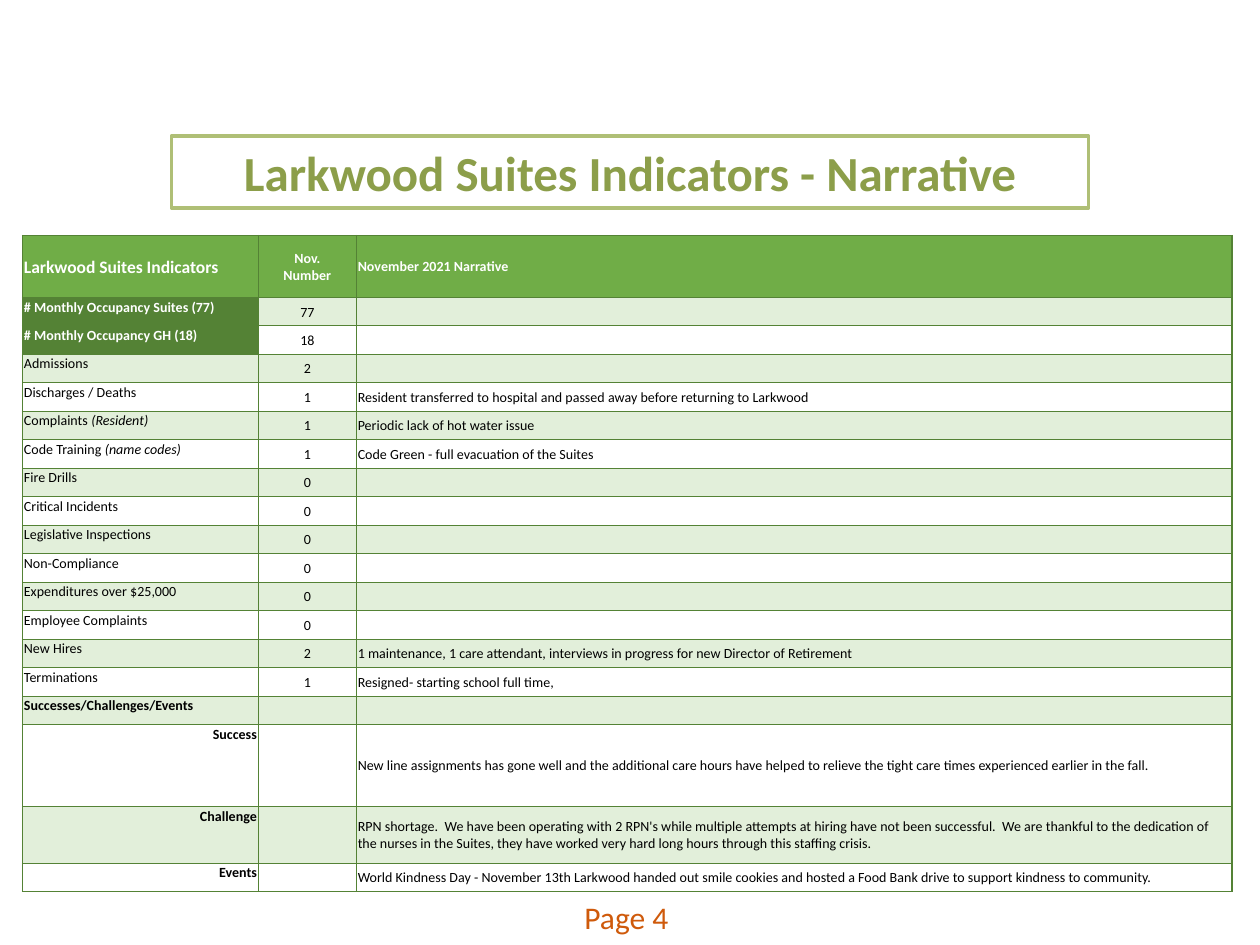
from lxml.etree import SubElement
from pptx import Presentation
from pptx.dml.color import RGBColor
from pptx.enum.shapes import MSO_SHAPE
from pptx.enum.text import MSO_ANCHOR, MSO_AUTO_SIZE, PP_ALIGN
from pptx.oxml.ns import qn
from pptx.util import Inches, Pt

COLORS = {
    "white": "FFFFFF",
    "black": "000000",
    "header": "70AD47",
    "border": "548235",
    "band": "E2EFDA",
    "title": "8C9E4A",
    "frame": "AFBF76",
    "page": "CF5A0B",
}


def write_text(para, text, color, size, bold=False, note="", align=PP_ALIGN.LEFT):
    para.text = text
    para.alignment = align
    if note:
        para.add_run().text = note
    for span in para.runs:
        formats = {"name": "Calibri", "size": Pt(size), "bold": bold, "italic": span.text == note}
        for name, value in formats.items():
            setattr(span.font, name, value)
        span.font.color.rgb = RGBColor.from_string(COLORS[color])
    for line_break in para._p.findall(qn("a:br")):
        SubElement(line_break, qn("a:rPr"), sz=str(size * 100))
    if not text:
        SubElement(para._p, qn("a:endParaRPr"), sz=str(size * 100))


def set_border(cell, side, points):
    line = SubElement(cell._tc.get_or_add_tcPr(), qn(f"a:ln{side}"), w=str(Pt(points)))
    fill = SubElement(line, qn("a:solidFill"))
    SubElement(fill, qn("a:srgbClr"), val=COLORS["border"])


deck = Presentation()
deck.slide_width, deck.slide_height = Inches(10), Inches(7.5)
page = deck.slides.add_slide(deck.slide_layouts[6])

page_box = page.shapes.add_textbox(Inches(4.54), Inches(7.08), Inches(2.33), Inches(0.4))
page_box.text_frame.word_wrap = True
write_text(page_box.text_frame.paragraphs[0], "Page 4", "page", 18)

title_box = page.shapes.add_shape(
    MSO_SHAPE.RECTANGLE, Inches(1.36), Inches(1.08), Inches(7.28), Inches(0.57)
)
title_box.shadow.inherit = False
title_box.fill.solid()
title_box.fill.fore_color.rgb = RGBColor.from_string(COLORS["white"])
title_box.line.color.rgb = RGBColor.from_string(COLORS["frame"])
title_box.line.width = Pt(2)
title_box.text_frame.word_wrap = True
title_box.text_frame.auto_size = MSO_AUTO_SIZE.SHAPE_TO_FIT_TEXT
write_text(
    title_box.text_frame.paragraphs[0],
    "Larkwood Suites Indicators - Narrative",
    "title", 28, bold=True, align=PP_ALIGN.CENTER,
)

rows = [
    ("Larkwood Suites Indicators", "Nov.\nNumber", "November 2021 Narrative"),
    ("# Monthly Occupancy Suites (77)", "77", ""),
    ("# Monthly Occupancy GH (18)", "18", ""),
    ("Admissions", "2", ""),
    ("Discharges / Deaths", "1",
     "Resident transferred to hospital and passed away before returning to Larkwood"),
    ("Complaints ", "1", "Periodic lack of hot water issue"),
    ("Code Training ", "1", "Code Green - full evacuation of the Suites"),
    ("Fire Drills", "0", ""),
    ("Critical Incidents", "0", ""),
    ("Legislative Inspections", "0", ""),
    ("Non-Compliance", "0", ""),
    ("Expenditures over $25,000", "0", ""),
    ("Employee Complaints", "0", ""),
    ("New Hires", "2",
     "1 maintenance, 1 care attendant, interviews in progress for new Director of Retirement"),
    ("Terminations", "1", "Resigned- starting school full time,"),
    ("Successes/Challenges/Events", "", ""),
    ("Success", "",
     "New line assignments has gone well and the additional care hours have helped to relieve "
     "the tight care times experienced earlier in the fall."),
    ("Challenge", "",
     "RPN shortage.  We have been operating with 2 RPN's while multiple attempts at hiring have "
     "not been successful.  We are thankful to the dedication of the nurses in the Suites, they "
     "have worked very hard long hours through this staffing crisis."),
    ("Events", "",
     "World Kindness Day - November 13th Larkwood handed out smile cookies and hosted a Food Bank "
     "drive to support kindness to community."),
]
notes = {"Complaints ": "(Resident)", "Code Training ": "(name codes)"}
tall_rows = {0: 0.49, 16: 0.65, 17: 0.45}
table_height = 5.21
plain_height = (table_height - sum(tall_rows.values())) / (len(rows) - len(tall_rows))
last_row = len(rows) - 1
first_section = 15

table = page.shapes.add_table(
    len(rows), 3, Inches(0.18), Inches(1.87), Inches(9.6), Inches(table_height)
).table
for column, width in zip(table.columns, (1.87, 0.78, 6.95)):
    column.width = Inches(width)

for row_number, texts in enumerate(rows):
    table.rows[row_number].height = Inches(tall_rows.get(row_number, plain_height))
    for column_number, text in enumerate(texts):
        cell = table.cell(row_number, column_number)
        is_label = column_number == 0
        is_header = row_number == 0
        is_occupancy = is_label and row_number in (1, 2)
        is_light = is_header or is_occupancy

        margins = {"margin_left": 0.01, "margin_right": 0.01, "margin_top": 0.01, "margin_bottom": 0}
        for name, value in margins.items():
            setattr(cell, name, Inches(value))
        cell.vertical_anchor = MSO_ANCHOR.TOP if is_label and not is_header else MSO_ANCHOR.MIDDLE

        outer_sides = {
            "L": is_label,
            "R": column_number == 2,
            "T": is_header,
            "B": row_number == last_row,
        }
        for side, is_outer in outer_sides.items():
            set_border(cell, side, 1 if is_outer else 0.5)

        if is_header:
            fill = "header"
        elif is_occupancy:
            fill = "border"
        else:
            fill = "band" if row_number % 2 else None
        if fill:
            cell.fill.solid()
            cell.fill.fore_color.rgb = RGBColor.from_string(COLORS[fill])
        else:
            cell.fill.background()

        align = PP_ALIGN.CENTER if column_number == 1 else PP_ALIGN.LEFT
        if is_label and row_number > first_section:
            align = PP_ALIGN.RIGHT
        write_text(
            cell.text_frame.paragraphs[0],
            text,
            "white" if is_light else "black",
            10 if is_header and is_label else 8,
            bold=is_light or (is_label and row_number >= first_section),
            note=notes.get(text, ""),
            align=align,
        )

deck.save("out.pptx")
